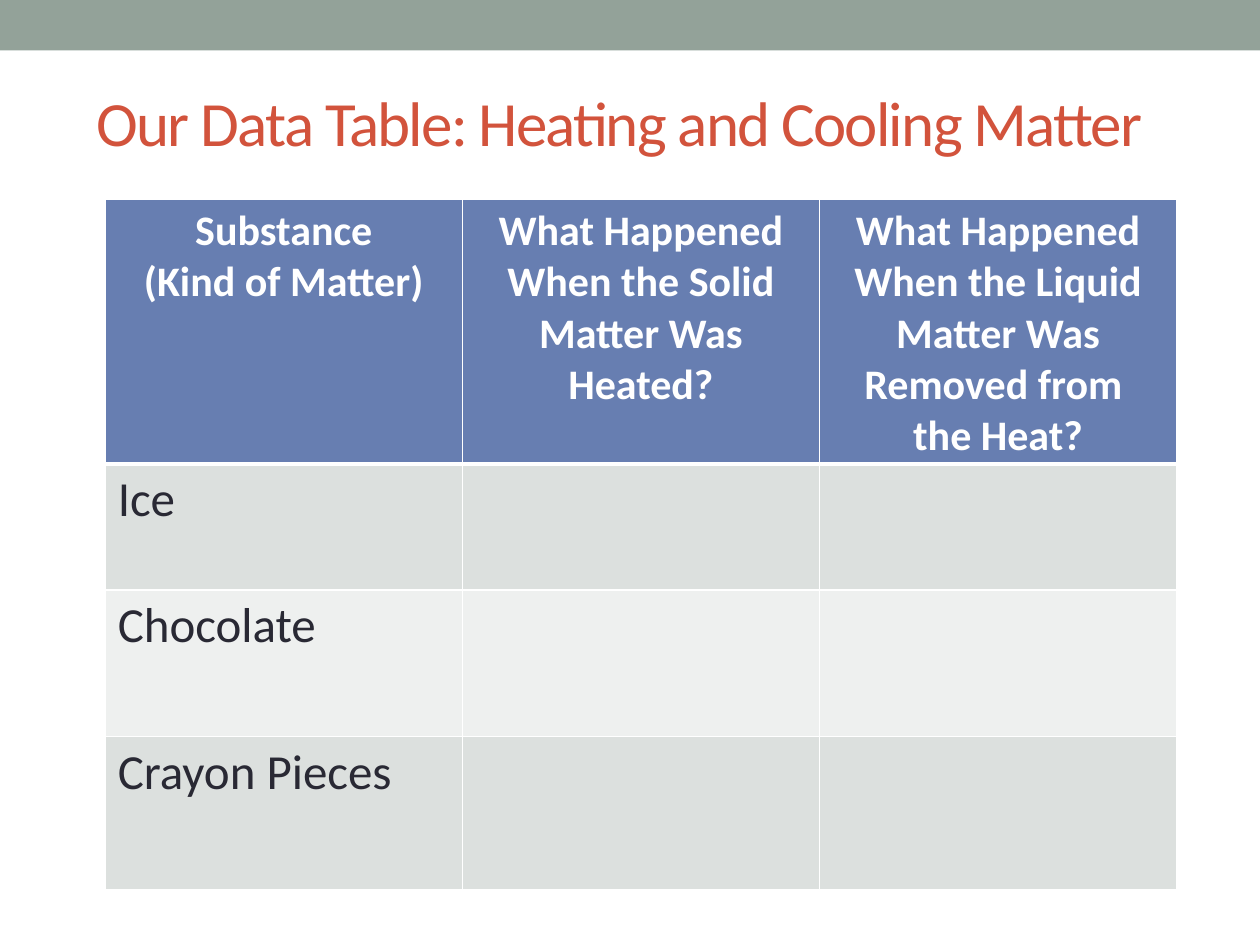
from dataclasses import dataclass

from lxml import etree
from pptx import Presentation
from pptx import util as u
from pptx.dml.color import RGBColor
from pptx.enum import shapes, text
from pptx.oxml.ns import qn

COLORS = {
    "band": "93A299",
    "title": "D2533C",
    "header": "677EB1",
    "odd_row": "DCE0DE",
    "even_row": "EEF0EF",
    "body": "292934",
    "white": "FFFFFF",
}
FONT = "Calibri"
COLUMN_WIDTH = 7.2


@dataclass(frozen=True)
class TextStyle:
    size: float
    color: str
    bold: bool = False
    align: text.PP_ALIGN = text.PP_ALIGN.LEFT
    spacing: float = 0


@dataclass(frozen=True)
class TableRow:
    height: float
    texts: tuple[str, ...]
    fill: str
    style: TextStyle
    bottom_border: float = 1


TITLE = TextStyle(36, "title")
HEADER = TextStyle(24, "white", True, text.PP_ALIGN.CENTER)
BODY = TextStyle(28, "body", spacing=6)

ROWS = (
    TableRow(
        5.16,
        (
            "Substance\n(Kind of Matter)",
            "What Happened When the Solid Matter Was Heated?",
            "What Happened When the Liquid Matter Was Removed from \vthe Heat?",
        ),
        "header",
        HEADER,
        3,
    ),
    TableRow(2.54, ("Ice", "", ""), "odd_row", BODY),
    TableRow(2.95, ("Chocolate", "", ""), "even_row", BODY),
    TableRow(3.1, ("Crayon Pieces", "", ""), "odd_row", BODY),
)


def rgb(name: str) -> RGBColor:
    return RGBColor.from_string(COLORS[name])


def set_attributes(target, values: dict) -> None:
    for name, value in values.items():
        setattr(target, name, value)


def write_text(frame, content: str, style: TextStyle) -> None:
    frame.text = content
    for paragraph in frame.paragraphs:
        set_attributes(paragraph, {
            "alignment": style.align,
            "space_before": u.Pt(style.spacing),
            "space_after": u.Pt(style.spacing),
        })
        for run in paragraph.runs:
            set_attributes(run.font, {
                "name": FONT,
                "size": u.Pt(style.size),
                "bold": style.bold,
            })
            run.font.color.rgb = rgb(style.color)


def add_band(slide) -> None:
    shape = slide.shapes.add_shape(
        shapes.MSO_SHAPE.RECTANGLE, 0, 0, u.Cm(25.4), u.Cm(1.02))
    shape.shadow.inherit = False
    shape.fill.solid()
    shape.fill.fore_color.rgb = rgb("band")
    shape.line.fill.background()


def add_title(slide, content: str) -> None:
    shape = slide.shapes.add_textbox(
        u.Cm(1.7), u.Cm(1.07), u.Cm(22.43), u.Cm(2.74))
    set_attributes(shape.text_frame, {
        "word_wrap": True,
        "vertical_anchor": text.MSO_ANCHOR.MIDDLE,
    })
    write_text(shape.text_frame, content, TITLE)
    for run in shape.text_frame.paragraphs[0].runs:
        run.font._element.set("spc", "-100")


def set_borders(cell, widths: dict[str, float]) -> None:
    properties = cell._tc.get_or_add_tcPr()
    for index, (side, width) in enumerate(widths.items()):
        line = etree.Element(qn(f"a:{side}"), w=str(u.Pt(width)))
        fill = etree.SubElement(line, qn("a:solidFill"))
        etree.SubElement(fill, qn("a:srgbClr"), val=COLORS["white"])
        properties.insert(index, line)


def add_data_table(slide, rows: tuple[TableRow, ...]) -> None:
    column_count = len(rows[0].texts)
    table = slide.shapes.add_table(
        len(rows), column_count, u.Cm(2.12), u.Cm(4.02),
        u.Cm(COLUMN_WIDTH * column_count),
        u.Cm(sum(row.height for row in rows))).table
    for column in table.columns:
        column.width = u.Cm(COLUMN_WIDTH)
    top_border = 1
    for row_index, row in enumerate(rows):
        table.rows[row_index].height = u.Cm(row.height)
        for column_index, content in enumerate(row.texts):
            cell = table.cell(row_index, column_index)
            cell.fill.solid()
            cell.fill.fore_color.rgb = rgb(row.fill)
            set_borders(cell, {
                "lnL": 1, "lnR": 1, "lnT": top_border, "lnB": row.bottom_border})
            if content:
                write_text(cell.text_frame, content, row.style)
        top_border = row.bottom_border


def main() -> None:
    presentation = Presentation()
    set_attributes(presentation, {
        "slide_width": u.Cm(25.4),
        "slide_height": u.Cm(19.05),
    })
    slide = presentation.slides.add_slide(presentation.slide_layouts[6])
    add_band(slide)
    add_title(slide, "Our Data Table: Heating and Cooling Matter")
    add_data_table(slide, ROWS)
    presentation.save("out.pptx")


if __name__ == "__main__":
    main()
